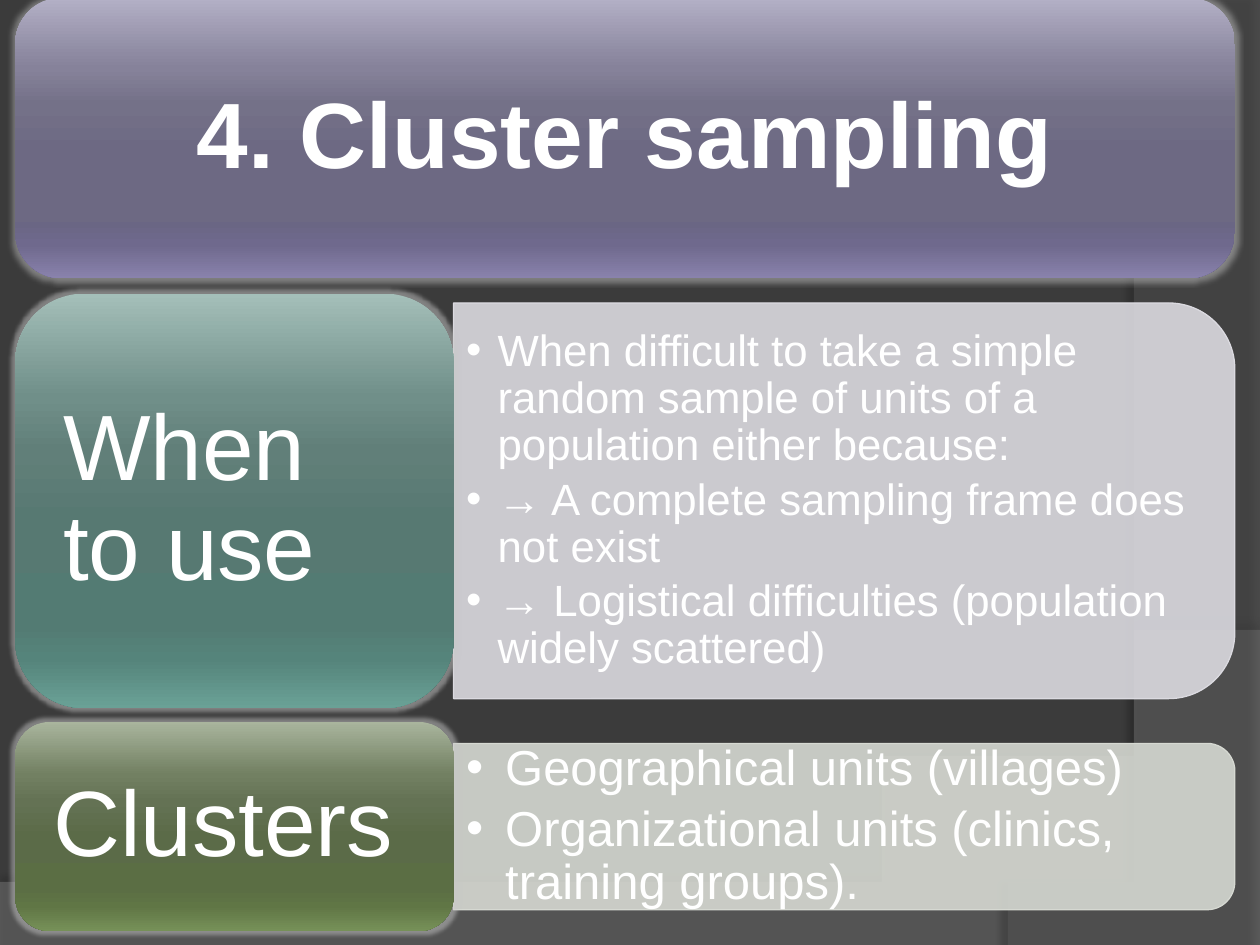
"""Build the cluster sampling slide: a title banner above two labelled rows."""
from lxml import etree
from pptx import Presentation
from pptx import util as u
from pptx.dml.color import RGBColor
from pptx.enum import shapes, text
from pptx.oxml.ns import qn

W, H = 10, 7.5
LEFT, SPLIT, RIGHT = 0.12, 3.6, 9.8
FONT = "Arial"
COLORS = {"back": "3B3B3B", "wave": "7F7F7F", "arc": "5E5E5E", "text": "FFFFFF",
          "shade": "000000", "glow": "C8C8C8", "lilac": "DBDAE0", "sage": "D6D9D2"}
STOPS = (0, 25, 38, 55, 80, 88, 100)
GRADIENTS = {
    "purple": ("B3B0C6", "86829A", "747188", "6D6983", "6A6684", "6F698D", "8982AC"),
    "teal": ("A4BFB9", "708F89", "617F79", "577972", "537B73", "55847B", "6AA196"),
    "green": ("A9B59D", "728062", "647254", "5B6B48", "5B6E44", "607645", "769058"),
}
TITLE = {"text": "4. Cluster sampling", "top": -0.02, "height": 2.23}
ROWS = [
    {"label": "When to use", "gradient": "teal", "panel": "lilac",
     "top": 2.33, "height": 3.29, "panel_height": 3.14, "size": 25, "indent": 0.25,
     "margin": 0.16,
     "items": ["When difficult to take a simple random sample of units of a "
               "population either because:",
               "→ A complete sampling frame does not exist",
               "→ Logistical difficulties (population widely scattered)"]},
    {"label": "Clusters", "gradient": "green", "panel": "sage",
     "top": 5.73, "height": 1.66, "panel_height": 1.32, "size": 28, "indent": 0.31,
     "margin": 0.07,
     "items": ["Geographical units (villages)",
               "Organizational units (clinics, training groups)."]},
]
SWEEPS = [
    {"color": "wave", "alpha": 45, "shade": (35, 4, 3.5, 270),
     "corners": [(0, H), (W, H)],
     "curve": [(W, 5.2), (5.59, 7.29), (3.91, 7.19), (0, 7.05)]},
    {"color": "arc", "alpha": 40, "shade": (45, 4, 4, 180),
     "corners": [(W, 0.02), (W, H)],
     "curve": [(8.21, H), (9.35, 6.19), (10.18, 3), (8, 0)]},
]


def rgb(name):
    return RGBColor.from_string(COLORS[name])


def add_alpha(color, percent):
    etree.SubElement(color, qn("a:alpha"), val=str(percent * 1000))


def fill_solid(shape, name, alpha):
    shape.fill.solid()
    shape.fill.fore_color.rgb = rgb(name)
    add_alpha(shape._element.spPr.find(qn("a:solidFill"))[0], alpha)


def fill_gradient(shape, name):
    shape.fill.gradient()
    shape.fill.gradient_angle = 270
    stops = shape._element.spPr.find(qn("a:gradFill")).find(qn("a:gsLst"))
    stops[:] = []
    for pos, value in zip(STOPS, GRADIENTS[name]):
        stop = etree.SubElement(stops, qn("a:gs"), pos=str(pos * 1000))
        etree.SubElement(stop, qn("a:srgbClr"), val=value)


def add_effect(shape, tag, name, alpha, **attrs):
    shape.shadow.inherit = False
    effects = shape._element.spPr.find(qn("a:effectLst"))
    effect = etree.SubElement(effects, qn(tag), **attrs)
    add_alpha(etree.SubElement(effect, qn("a:srgbClr"), val=COLORS[name]), alpha)


def bezier(points, steps=40):
    for i in range(steps + 1):
        t = i / steps
        weights = ((1 - t) ** 3, 3 * t * (1 - t) ** 2, 3 * t * t * (1 - t), t ** 3)
        yield tuple(sum(w * pt[k] for w, pt in zip(weights, points)) for k in (0, 1))


def add_sweep(s, sweep):
    start, *rest = sweep["corners"] + list(bezier(sweep["curve"]))
    builder = s.shapes.build_freeform(*start, scale=u.Inches(1))
    builder.add_line_segments(rest, close=True)
    sp = builder.convert_to_shape()
    fill_solid(sp, sweep["color"], sweep["alpha"])
    sp.line.fill.background()
    alpha, blur, dist, angle = sweep["shade"]
    add_effect(sp, "a:outerShdw", "shade", alpha, blurRad=str(u.Pt(blur)),
               dist=str(u.Pt(dist)), dir=str(angle * 60000), algn="ctr")


def add_card(s, top, width, height, gradient):
    sp = s.shapes.add_shape(shapes.MSO_SHAPE.ROUNDED_RECTANGLE,
                            *map(u.Inches, (LEFT, top, width, height)))
    fill_gradient(sp, gradient)
    sp.line.fill.background()
    add_effect(sp, "a:glow", "glow", 50, rad=str(u.Pt(5)))
    return sp


def add_panel(s, middle, height, color):
    width = RIGHT - SPLIT
    box = ((SPLIT + RIGHT - height) / 2, middle - width / 2, height, width)
    sp = s.shapes.add_shape(shapes.MSO_SHAPE.ROUND_2_SAME_RECTANGLE, *map(u.Inches, box))
    sp.rotation = 90
    fill_solid(sp, color, 90)
    sp.line.color.rgb = rgb(color)
    sp.line.width = u.Pt(0.75)
    sp.shadow.inherit = False


def place(s, ph, left, top, width, height):
    ph.left, ph.top, ph.width, ph.height = map(u.Inches, (left, top, width, height))
    s.shapes._spTree.append(ph._element)


def set_text(sp, lines, size, align, insets, bold=False, indent=0):
    tf = sp.text_frame
    tf.text = "\n".join(lines)
    tf.word_wrap = True
    tf.auto_size = text.MSO_AUTO_SIZE.NONE
    tf.vertical_anchor = text.MSO_ANCHOR.MIDDLE
    tf.margin_left = tf.margin_right = u.Inches(insets[0])
    tf.margin_top = tf.margin_bottom = u.Inches(insets[1])
    for p in tf.paragraphs:
        if indent:
            pPr = p._p.get_or_add_pPr()
            pPr.set("marL", str(u.Inches(indent)))
            pPr.set("indent", str(-u.Inches(indent)))
            etree.SubElement(pPr, qn("a:buChar"), char="•")
            p.space_after = u.Pt(round(size * 0.16, 1))
        p.alignment = align
        p.line_spacing = 0.9
        p.space_before = u.Pt(0)
        for r in p.runs:
            r.font.name, r.font.size, r.font.bold = FONT, u.Pt(size), bold
            r.font.color.rgb = rgb("text")


def main():
    prs = Presentation()
    prs.slide_width, prs.slide_height = u.Inches(W), u.Inches(H)
    s = prs.slides.add_slide(prs.slide_layouts[3])
    s.background.fill.solid()
    s.background.fill.fore_color.rgb = rgb("back")
    title, *bodies = list(s.placeholders)
    for sweep in SWEEPS:
        add_sweep(s, sweep)

    width = RIGHT - LEFT
    add_card(s, TITLE["top"], width, TITLE["height"], "purple")
    place(s, title, LEFT, TITLE["top"], width, TITLE["height"])
    set_text(title, [TITLE["text"]], 53, text.PP_ALIGN.CENTER, (0.22, 0.11), bold=True)

    for row, body in zip(ROWS, bodies):
        middle = row["top"] + row["height"] / 2
        add_panel(s, middle, row["panel_height"], row["panel"])
        card = add_card(s, row["top"], SPLIT - LEFT, row["height"], row["gradient"])
        set_text(card, [row["label"]], 53, text.PP_ALIGN.LEFT, (0.22, 0.11))
        height = row["panel_height"] - 2 * row["margin"]
        place(s, body, SPLIT, middle - height / 2,
              RIGHT - SPLIT - row["margin"], height)
        set_text(body, row["items"], row["size"], text.PP_ALIGN.LEFT, (0.1, 0.05),
                 indent=row["indent"])
    prs.save("out.pptx")


if __name__ == "__main__":
    main()
